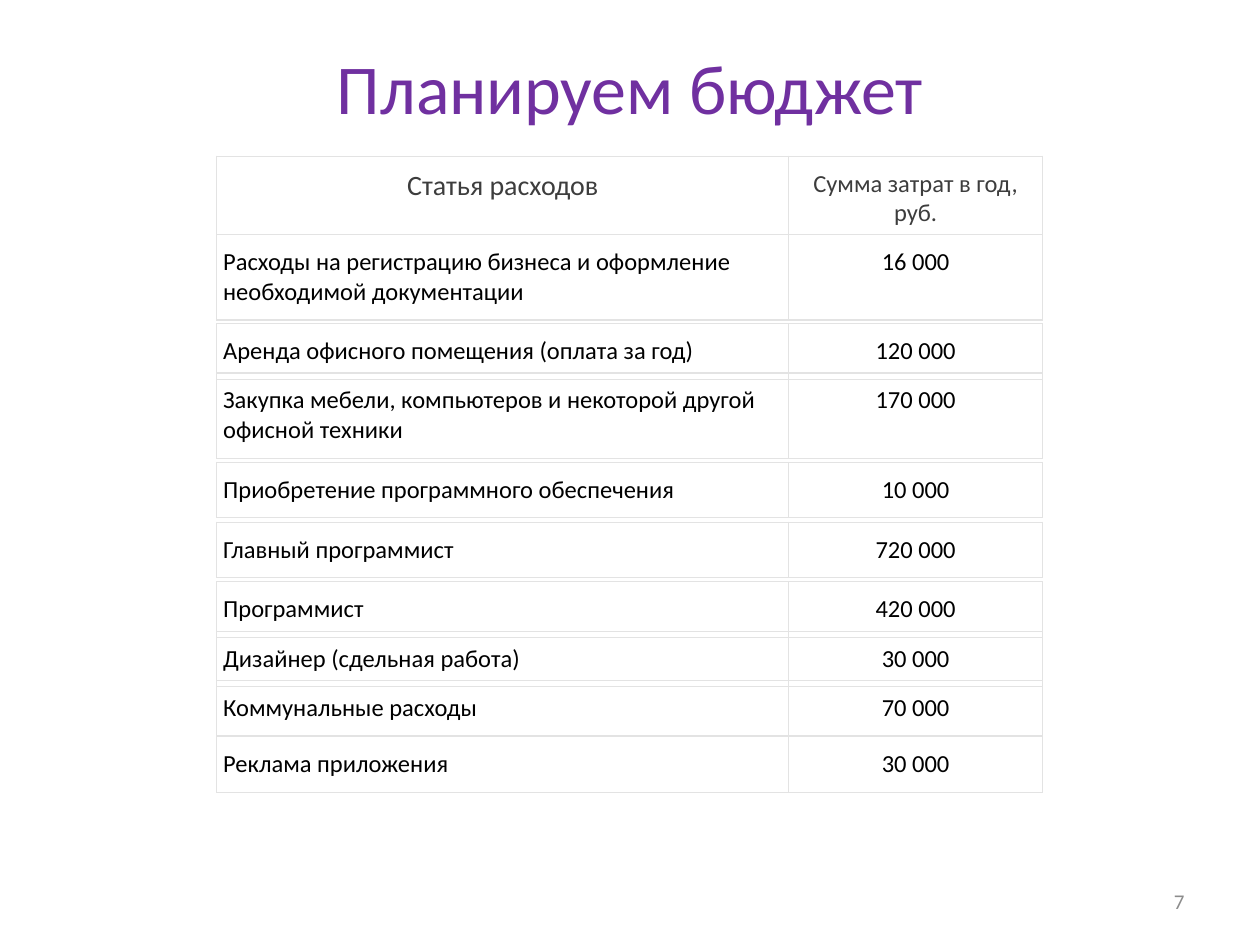
from pptx import Presentation
from pptx.dml.color import RGBColor
from pptx.enum.text import MSO_ANCHOR as Anchor, PP_ALIGN as Align
from pptx.oxml import parse_xml
from pptx.oxml.ns import nsdecls
from pptx.util import Pt

FONT = "Calibri"
LEFT, COL_WIDTHS = 123.9, (326.9, 144.9)
ONE_LINE, TWO_LINES = 31.7, 49

# top, height, white fill, expense item, sum
BUDGET = [
    (133.9, TWO_LINES, True, "Расходы на регистрацию бизнеса и оформление "
     "необходимой документации", "16 000"),
    (185, ONE_LINE, False, "Аренда офисного помещения (оплата за год)", "120 000"),
    (213.1, TWO_LINES, False, "Закупка мебели, компьютеров и некоторой другой "
     "офисной техники", "170 000"),
    (264.2, ONE_LINE, True, "Приобретение программного обеспечения", "10 000"),
    (298.4, ONE_LINE, True, "Главный программист", "720 000"),
    (332.5, ONE_LINE, False, "Программист", "420 000"),
    (360.7, ONE_LINE, False, "Дизайнер (сдельная работа)", "30 000"),
    (388.9, ONE_LINE, False, "Коммунальные расходы", "70 000"),
    (421, ONE_LINE, False, "Реклама приложения", "30 000"),
]


def rgb(value):
    return RGBColor.from_string(value)


def write(tf, text, size, color, align):
    p = tf.paragraphs[0]
    p.alignment = align
    r = p.add_run()
    r.text = text
    r.font.name = FONT
    r.font.size = Pt(size)
    r.font.color.rgb = rgb(color)


def add_borders(cell, color="E3E3E3", width=0.75):
    tc_pr = cell._tc.get_or_add_tcPr()
    for side in "LRTB":
        tc_pr.append(parse_xml(
            f'<a:ln{side} {nsdecls("a")} w="{Pt(width)}"><a:solidFill>'
            f'<a:srgbClr val="{color}"/></a:solidFill></a:ln{side}>'))


def add_row_table(s, top, height, filled, texts, sizes=(14, 14),
                  color="000000", first_align=Align.LEFT):
    """Add a table of one row, as each budget line stands on its own."""
    table = s.shapes.add_table(1, 2, Pt(LEFT), Pt(top), Pt(sum(COL_WIDTHS)),
                               Pt(height)).table
    table.first_row = table.horz_banding = False
    aligns = (first_align, Align.CENTER)
    for i, (text, size, align) in enumerate(zip(texts, sizes, aligns)):
        table.columns[i].width = Pt(COL_WIDTHS[i])
        cell = table.cell(0, i)
        cell.margin_left = cell.margin_right = Pt(3.6)
        cell.margin_top = cell.margin_bottom = Pt(7.2)
        add_borders(cell)
        if filled:
            cell.fill.solid()
            cell.fill.fore_color.rgb = rgb("FFFFFF")
        else:
            cell.fill.background()
        write(cell.text_frame, text, size, color, align)


def set_title(s, text):
    title = s.shapes.title
    title.left, title.top, title.width, title.height = map(Pt, (36, 21.6, 648, 72.7))
    tf = title.text_frame
    tf.vertical_anchor = Anchor.TOP
    write(tf, text, 40, "7030A0", Align.CENTER)


def add_page_number(s, number):
    tf = s.shapes.add_textbox(Pt(516), Pt(500.5), Pt(168), Pt(28.8)).text_frame
    tf.word_wrap = True
    tf.vertical_anchor = Anchor.MIDDLE
    write(tf, number, 12, "8C8C8C", Align.RIGHT)


def main():
    prs = Presentation()
    prs.slide_width, prs.slide_height = Pt(720), Pt(540)
    s = prs.slides.add_slide(prs.slide_layouts[5])
    set_title(s, "Планируем бюджет")
    add_row_table(s, 89.3, TWO_LINES, True,
                  ("Статья расходов", "Сумма затрат в год, руб."),
                  sizes=(16, 14), color="3D3D3D", first_align=Align.CENTER)
    for top, height, filled, item, amount in BUDGET:
        add_row_table(s, top, height, filled, (item, amount))
    add_page_number(s, "7")
    prs.save("out.pptx")


if __name__ == "__main__":
    main()
